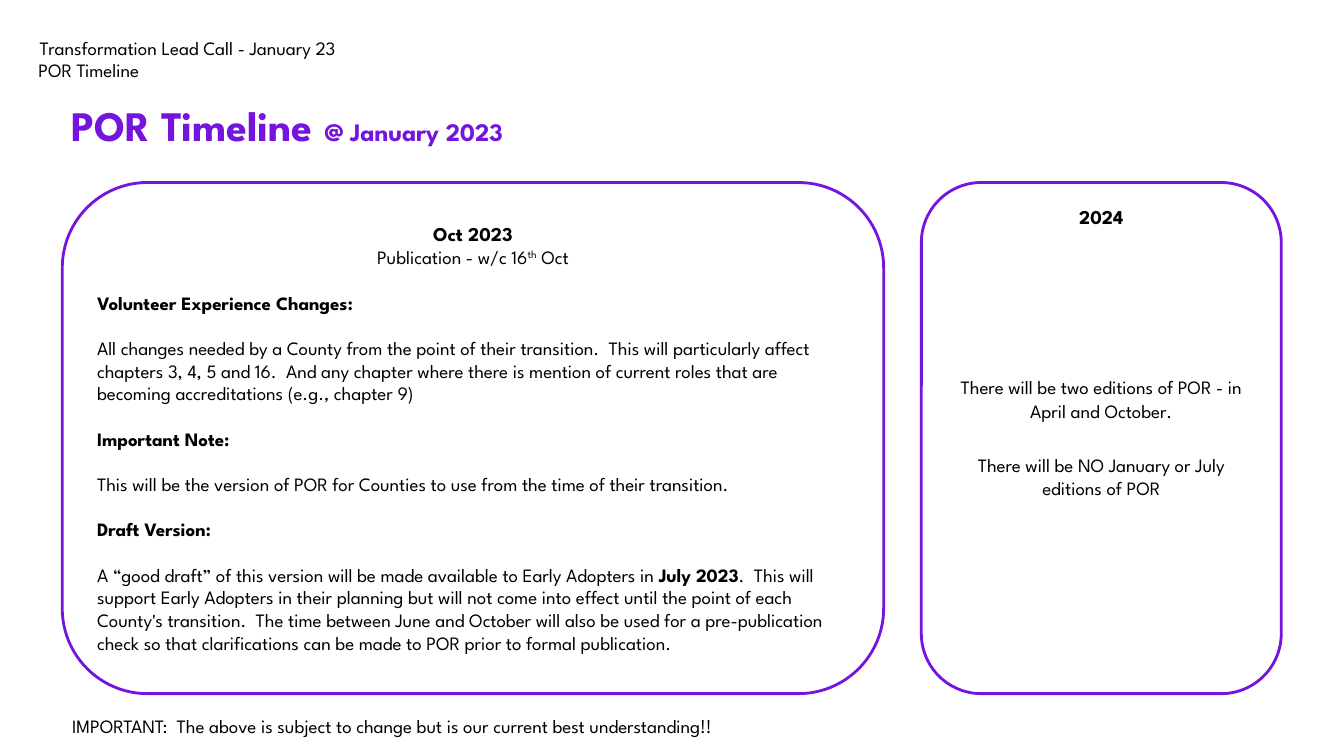
from pptx import Presentation
from pptx.dml.color import RGBColor
from pptx.enum.shapes import MSO_SHAPE
from pptx.enum.text import MSO_ANCHOR, MSO_AUTO_SIZE, PP_ALIGN
from pptx.util import Cm, Pt

PURPLE = RGBColor(0x74, 0x14, 0xDC)
BLACK = RGBColor(0, 0, 0)
FONT = "League Spartan"
BODY = 13.5
HEADING = 14
LINE_GAP = 16.2
PANEL_TOP = 4.6
PANEL_HEIGHT = 12.88


def add_run(paragraph, text, size=BODY, bold=False, color=BLACK, superscript=False):
    run = paragraph.add_run()
    run.text = text
    run.font.name = FONT
    run.font.size = Pt(size)
    run.font.bold = bold
    run.font.color.rgb = color
    if superscript:
        run.font._element.set("baseline", "30000")


def next_paragraph(frame, align=PP_ALIGN.LEFT, before=0):
    first = frame.paragraphs[0]
    paragraph = frame.add_paragraph() if first.runs else first
    paragraph.alignment = align
    if before:
        paragraph.space_before = Pt(before)
    return paragraph


def add_text(slide, left, top, width, height, margin=None):
    frame = slide.shapes.add_textbox(Cm(left), Cm(top), Cm(width), Cm(height)).text_frame
    frame.word_wrap = True
    if margin is not None:
        set_margins(frame, margin)
    return frame


def set_margins(frame, margin):
    frame.margin_left = frame.margin_right = Cm(margin)
    frame.margin_top = frame.margin_bottom = Cm(margin)


def add_panel(slide, left, width, anchor):
    panel = slide.shapes.add_shape(
        MSO_SHAPE.ROUNDED_RECTANGLE, Cm(left), Cm(PANEL_TOP), Cm(width), Cm(PANEL_HEIGHT)
    )
    panel.shadow.inherit = False
    panel.fill.background()
    panel.line.color.rgb = PURPLE
    panel.line.width = Pt(2)
    frame = panel.text_frame
    frame.word_wrap = True
    frame.vertical_anchor = anchor
    return frame


def set_call_title(slide):
    title = slide.shapes.title
    title.left, title.top, title.width, title.height = Cm(0.97), Cm(0.91), Cm(15.98), Cm(0.58)
    frame = title.text_frame
    set_margins(frame, 0)
    frame.margin_left = Cm(0.03)
    frame.vertical_anchor = MSO_ANCHOR.BOTTOM
    frame.auto_size = MSO_AUTO_SIZE.NONE
    frame.word_wrap = True
    add_run(next_paragraph(frame), "Transformation Lead Call - January 23")


def add_section(frame, heading, runs):
    add_run(next_paragraph(frame, before=LINE_GAP), heading, bold=True)
    body = next_paragraph(frame, before=LINE_GAP)
    for text, bold in runs:
        add_run(body, text, bold=bold)


def fill_october(frame):
    add_run(next_paragraph(frame, PP_ALIGN.CENTER), "Oct 2023", HEADING, bold=True)
    publication = next_paragraph(frame, PP_ALIGN.CENTER)
    add_run(publication, "Publication - w/c 16")
    add_run(publication, "th", superscript=True)
    add_run(publication, " Oct")
    add_section(frame, "Volunteer Experience Changes: ", [
        ("All changes needed by a County from the point of their transition.  This will "
         "particularly affect chapters 3, 4, 5 and 16.  And any chapter where there is mention "
         "of current roles that are becoming accreditations (e.g., chapter 9)", False),
    ])
    add_section(frame, "Important Note: ", [
        ("This will be the version of POR for Counties to use from the time of their "
         "transition.", False),
    ])
    add_section(frame, "Draft Version:", [
        ("A “good draft” of this version will be made available to Early Adopters in ", False),
        ("July 2023", True),
        (".  This will support Early Adopters in their planning but will not come into effect "
         "until the point of each County's transition.  The time between June and October will "
         "also be used for a pre-publication check so that clarifications can be made to POR "
         "prior to formal publication.", False),
    ])


def fill_next_year(frame):
    add_run(next_paragraph(frame, PP_ALIGN.CENTER), "2024", HEADING, bold=True)
    editions = next_paragraph(frame, PP_ALIGN.CENTER, before=104)
    editions.line_spacing = 1.07
    add_run(editions, "There will be two editions of POR - in April and October.")
    no_editions = next_paragraph(frame, PP_ALIGN.CENTER, before=LINE_GAP + 6)
    add_run(no_editions, "There will be NO January or July editions of POR")


def main():
    deck = Presentation()
    deck.slide_width, deck.slide_height = Cm(33.87), Cm(19.05)
    slide = deck.slides.add_slide(deck.slide_layouts[5])

    set_call_title(slide)
    subtitle = add_text(slide, 0.97, 1.47, 15.98, 0.58, margin=0)
    add_run(next_paragraph(subtitle), "POR Timeline")

    timeline = add_text(slide, 1.37, 2.31, 16.94, 1.63)
    timeline.margin_left = Cm(0.43)
    heading = next_paragraph(timeline)
    for text, size in (("POR Timeline", 30), (" ", 32), ("@ January 2023", 18)):
        add_run(heading, text, size, bold=True, color=PURPLE)

    fill_october(add_panel(slide, 1.57, 20.7, MSO_ANCHOR.MIDDLE))
    fill_next_year(add_panel(slide, 23.22, 9.07, MSO_ANCHOR.TOP))

    note = add_text(slide, 1.57, 17.88, 19.58, 0.84)
    add_run(next_paragraph(note),
            "IMPORTANT:  The above is subject to change but is our current best understanding!!")

    deck.save("out.pptx")


if __name__ == "__main__":
    main()
